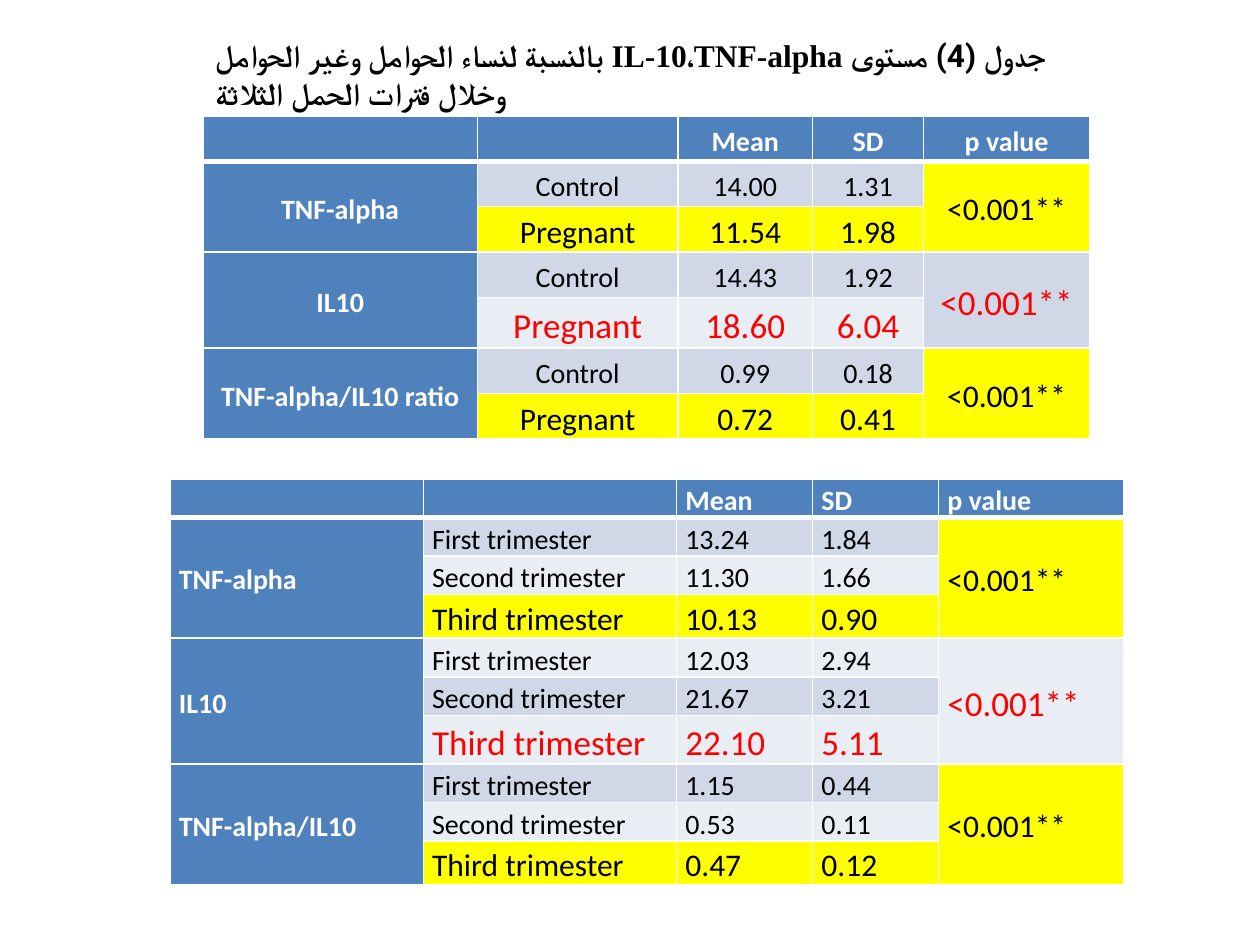
from dataclasses import dataclass

from lxml.etree import SubElement
from pptx import Presentation
from pptx.dml.color import RGBColor as RGB
from pptx.enum.text import MSO_ANCHOR as Anchor, MSO_AUTO_SIZE as AutoSize, PP_ALIGN as Align
from pptx.oxml.ns import qn
from pptx.util import Inches, Pt


@dataclass(frozen=True)
class Theme:
    header: str = "4F81BD"
    bands: tuple = ("E9EDF4", "D0D8E8")
    highlight: str = "FFFF00"
    white: str = "FFFFFF"
    black: str = "000000"
    red: str = "FF0000"
    body: int = 16
    large: int = 18
    largest: int = 20
    table_font: str = "Calibri"
    arabic_font: str = "Roboto"
    latin_font: str = "Times New Roman"
    line_spacing: float = 1.15
    border: int = 1
    header_border: int = 3


class SlideBuilder:
    def __init__(self, slide, theme):
        self.slide = slide
        self.theme = theme

    def run(self, paragraph, text, color, **font_format):
        run = paragraph.add_run()
        run.text = text
        for attribute, value in font_format.items():
            setattr(run.font, attribute, value)
        run.font.color.rgb = RGB.from_string(color)
        return run

    def title(self, box, parts):
        """Right-to-left heading made of (text, font name) parts."""
        heading = self.slide.shapes.add_textbox(*map(Inches, box))
        frame = heading.text_frame
        frame_format = {"word_wrap": True, "auto_size": AutoSize.SHAPE_TO_FIT_TEXT,
                        "vertical_anchor": Anchor.MIDDLE}
        for attribute, value in frame_format.items():
            setattr(frame, attribute, value)
        paragraph = frame.paragraphs[0]
        paragraph._p.get_or_add_pPr().set("rtl", "1")
        for text, font in parts:
            run = self.run(paragraph, text, self.theme.black, name=font,
                           size=Pt(self.theme.large), bold=True)
            SubElement(run.font._element, qn("a:cs"), typeface=font)

    def borders(self, cell, row):
        properties = cell._tc.get_or_add_tcPr()
        header_edge = {0: "B", 1: "T"}.get(row)
        for side in "LRTB":
            width = self.theme.header_border if side == header_edge else self.theme.border
            line = SubElement(properties, qn(f"a:ln{side}"), w=str(Pt(width)))
            fill = SubElement(line, qn("a:solidFill"))
            SubElement(fill, qn("a:srgbClr"), val=self.theme.white)

    def cell(self, cell, row, text, fill, color, size, align, margins, bold=False):
        cell_format = dict(zip(("margin_left", "margin_top", "margin_right", "margin_bottom"),
                               map(Inches, margins)))
        cell_format["vertical_anchor"] = Anchor.MIDDLE
        for attribute, value in cell_format.items():
            setattr(cell, attribute, value)
        self.borders(cell, row)
        cell.fill.solid()
        cell.fill.fore_color.rgb = RGB.from_string(fill)
        if text:
            paragraph = cell.text_frame.paragraphs[0]
            paragraph.alignment = align
            paragraph.line_spacing = self.theme.line_spacing
            self.run(paragraph, text, color, name=self.theme.table_font,
                     size=Pt(size), bold=bold)

    def results_table(self, left, top, widths, row_height, groups, align, margins):
        """Groups are (marker, p value, is_red, rows); the last row of each is emphasised."""
        theme = self.theme
        row_count = 1 + sum(len(rows) for *_, rows in groups)
        table = self.slide.shapes.add_table(
            row_count, len(widths), Inches(left), Inches(top),
            Inches(sum(widths)), Inches(row_height * row_count)).table
        for column, width in zip(table.columns, widths):
            column.width = Inches(width)
        for row in table.rows:
            row.height = Inches(row_height)

        def put(row, column, text, fill, color, size, bold=False):
            self.cell(table.cell(row, column), row, text, fill, color, size,
                      align, margins, bold)

        heading = (theme.header, theme.white, theme.body, True)
        for column, text in enumerate(("", "", "Mean", "SD", "p value")):
            put(0, column, text, *heading)

        first = 1
        for marker, p_value, is_red, rows in groups:
            last = first + len(rows) - 1
            for row, values in enumerate(rows, first):
                band = theme.bands[row % 2]
                emphasis = ((band, theme.red, theme.largest) if is_red
                            else (theme.highlight, theme.black, theme.large))
                plain = (band, theme.black, theme.body)
                for column, text in enumerate(values, 1):
                    put(row, column, text, *(emphasis if row == last else plain))
                put(row, 0, marker if row == first else "", *heading)
                put(row, 4, p_value if row == first else "", *emphasis)
            for column in (0, 4):
                table.cell(first, column).merge(table.cell(last, column))
            first = last + 1


def label_rows(labels, *values):
    return [(label, *pair) for label, pair in zip(labels, values)]


def main():
    presentation = Presentation()
    presentation.slide_width, presentation.slide_height = Inches(10), Inches(7.5)
    theme = Theme()
    builder = SlideBuilder(
        presentation.slides.add_slide(presentation.slide_layouts[6]), theme)

    significance = "<0.001**"
    status = ("Control", "Pregnant")
    builder.results_table(
        1.61, 0.92, (2.18, 1.59, 1.07, 0.88, 1.32), 0.36,
        [("TNF-alpha", significance, False,
          label_rows(status, ("14.00", "1.31"), ("11.54", "1.98"))),
         ("IL10", significance, True,
          label_rows(status, ("14.43", "1.92"), ("18.60", "6.04"))),
         ("TNF-alpha/IL10 ratio", significance, False,
          label_rows(status, ("0.99", "0.18"), ("0.72", "0.41")))],
        Align.CENTER, (0.01, 0.01, 0.01, 0))

    builder.title(
        (1.61, 0.23, 7.04, 0.71),
        [("جدول (4) مستوى ", theme.arabic_font),
         ("IL-10،TNF-alpha", theme.latin_font),
         (" بالنسبة لنساء الحوامل وغير الحوامل وخلال فترات الحمل الثلاثة",
          theme.arabic_font)])

    trimesters = ("First trimester", "Second trimester", "Third trimester")
    builder.results_table(
        1.35, 3.8, (2.01, 2.01, 1.08, 1, 1.47), 0.28,
        [("TNF-alpha", significance, False,
          label_rows(trimesters, ("13.24", "1.84"), ("11.30", "1.66"), ("10.13", "0.90"))),
         ("IL10", significance, True,
          label_rows(trimesters, ("12.03", "2.94"), ("21.67", "3.21"), ("22.10", "5.11"))),
         ("TNF-alpha/IL10", significance, False,
          label_rows(trimesters, ("1.15", "0.44"), ("0.53", "0.11"), ("0.47", "0.12")))],
        Align.JUSTIFY, (0.07, 0, 0.07, 0))

    presentation.save("out.pptx")


if __name__ == "__main__":
    main()
